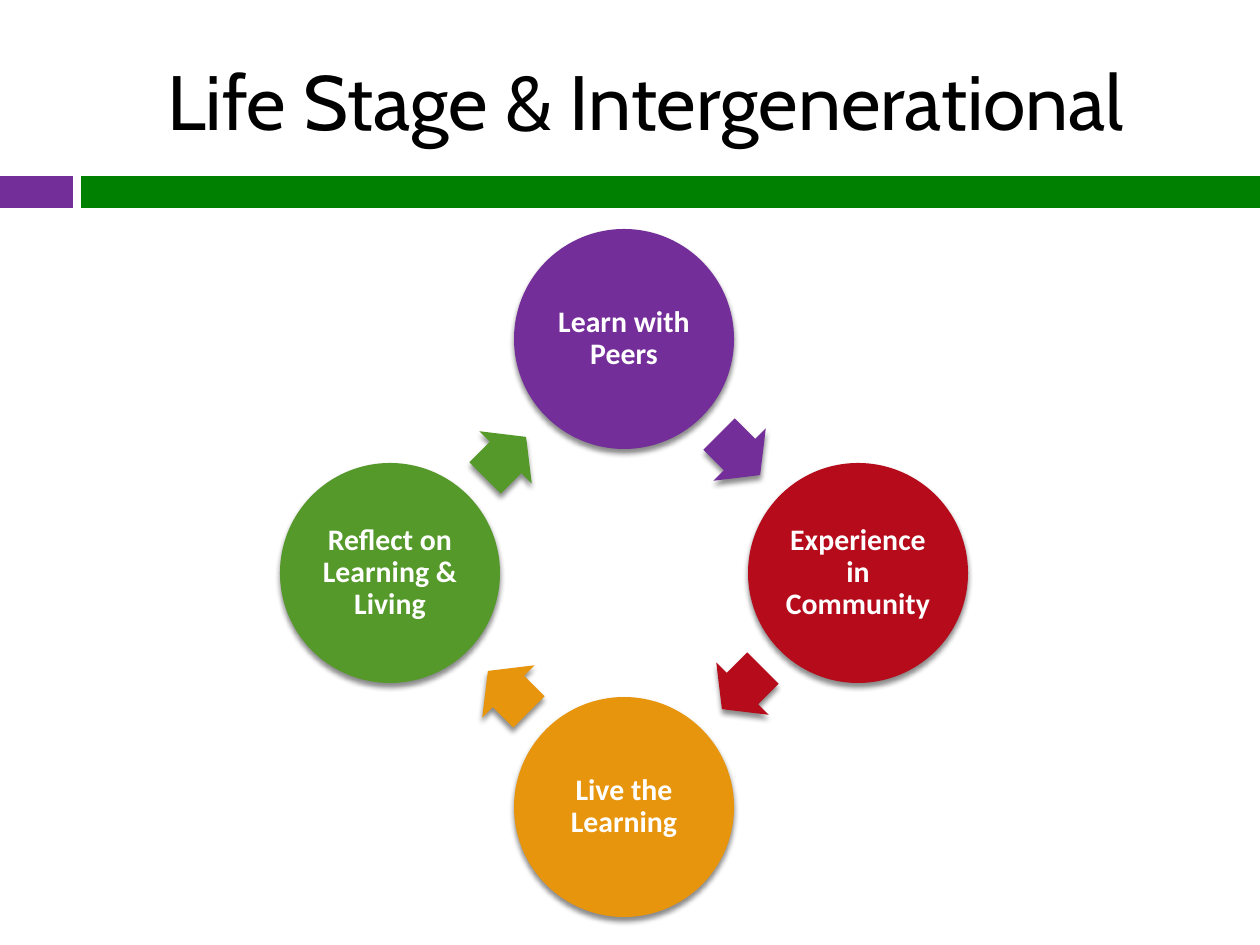
import math
from dataclasses import dataclass

import lxml.etree
import pptx
import pptx.dml.color
import pptx.enum.shapes
import pptx.enum.text
import pptx.oxml.ns
import pptx.util

SCALE = 914400 / 126  # EMU per px
SHAPES = pptx.enum.shapes.MSO_SHAPE


@dataclass(frozen=True)
class Theme:
    purple: str = "732E9A"
    green: str = "008000"
    red: str = "B50B1B"
    orange: str = "E8950E"
    leaf: str = "55992B"
    black: str = "000000"
    white: str = "FFFFFF"
    title_font: str = "Cabin"
    stage_font: str = "Calibri"
    title_size: int = 44
    stage_size: int = 17


THEME = Theme()

STAGES = [
    ("Learn with Peers", THEME.purple),
    ("Experience in Community", THEME.red),
    ("Live the Learning", THEME.orange),
    ("Reflect on Learning & Living", THEME.leaf),
]


def px(length):
    return pptx.util.Emu(round(length * SCALE))


def set_attributes(target, values):
    for name, value in values.items():
        setattr(target, name, value)


def place(target, box):
    set_attributes(target, dict(zip(("left", "top", "width", "height"), map(px, box))))


def write(shape, text, inset, font, color):
    """Centre one paragraph of text in a shape."""
    frame = shape.text_frame
    frame.text = text
    margins = ("margin_left", "margin_top", "margin_right", "margin_bottom")
    set_attributes(frame, dict.fromkeys(margins, px(inset)))
    set_attributes(frame, {
        "word_wrap": True,
        "auto_size": pptx.enum.text.MSO_AUTO_SIZE.NONE,
        "vertical_anchor": pptx.enum.text.MSO_ANCHOR.MIDDLE,
    })
    paragraph = frame.paragraphs[0]
    paragraph.alignment = pptx.enum.text.PP_ALIGN.CENTER
    set_attributes(paragraph.font, font)
    paragraph.font.color.rgb = pptx.dml.color.RGBColor.from_string(color)
    return paragraph


def add_filled(slide, preset, box, color):
    shape = slide.shapes.add_shape(preset, *map(px, box))
    shape.fill.solid()
    shape.fill.fore_color.rgb = pptx.dml.color.RGBColor.from_string(color)
    shape.line.fill.background()
    shape.shadow.inherit = False
    return shape


def add_soft_shadow(shape):
    qn = pptx.oxml.ns.qn
    effects = shape._element.spPr.find(qn("a:effectLst"))
    shadow = lxml.etree.SubElement(
        effects, qn("a:outerShdw"), blurRad=str(pptx.util.Pt(3)),
        dist=str(pptx.util.Pt(2.4)), dir="5400000", rotWithShape="0")
    tint = lxml.etree.SubElement(shadow, qn("a:srgbClr"), val=THEME.black)
    lxml.etree.SubElement(tint, qn("a:alpha"), val="45000")


def add_title(slide, box):
    title = slide.shapes.title
    place(title, box)
    font = {"name": THEME.title_font, "size": pptx.util.Pt(THEME.title_size), "bold": False}
    write(title, "Life Stage & Intergenerational", 6, font, THEME.black)


def add_banner(slide, box, tab=73, gap=8):
    left, top, width, height = box
    add_filled(slide, SHAPES.RECTANGLE, (left, top, tab, height), THEME.purple)
    start = tab + gap
    add_filled(slide, SHAPES.RECTANGLE, (left + start, top, width - start, height), THEME.green)


def add_cycle(slide, box, diameter=220, arrow_width=58, arrow_height=74, setback=2):
    left, top, width, height = box
    center_x, center_y = left + width / 2, top + height / 2
    orbit = (width - diameter) / 2
    step = 2 * math.pi / len(STAGES)
    # Arrows sit halfway along the chord between neighbouring stages
    arrow_orbit = orbit * math.cos(step / 2)
    font = {"name": THEME.stage_font, "size": pptx.util.Pt(THEME.stage_size), "bold": True}

    for index, (label, color) in enumerate(STAGES):
        # Stage circle, clockwise from the top
        angle = index * step
        x = center_x + orbit * math.sin(angle)
        y = center_y - orbit * math.cos(angle)
        circle = add_filled(slide, SHAPES.OVAL,
                            (x - diameter / 2, y - diameter / 2, diameter, diameter), color)
        add_soft_shadow(circle)
        write(circle, label, 3, font, THEME.white).line_spacing = 0.9

        # Arrow to the next stage, set slightly back towards its own circle
        heading = angle + step / 2
        x = center_x + arrow_orbit * math.sin(heading) - setback * math.cos(heading)
        y = center_y - arrow_orbit * math.cos(heading) - setback * math.sin(heading)
        arrow = add_filled(slide, SHAPES.RIGHT_ARROW,
                           (x - arrow_width / 2, y - arrow_height / 2,
                            arrow_width, arrow_height), color)
        arrow.adjustments[0] = 0.6
        arrow.adjustments[1] = 0.5
        arrow.rotation = math.degrees(heading)
        add_soft_shadow(arrow)


def main():
    deck = pptx.Presentation()
    set_attributes(deck, {"slide_width": px(1260), "slide_height": px(945)})
    slide = deck.slides.add_slide(deck.slide_layouts.get_by_name("Title Only"))
    add_title(slide, (84, 32, 1124, 136))
    add_banner(slide, (0, 176, 1260, 32))
    add_cycle(slide, (280, 229, 688, 688))
    deck.save("out.pptx")


if __name__ == "__main__":
    main()
